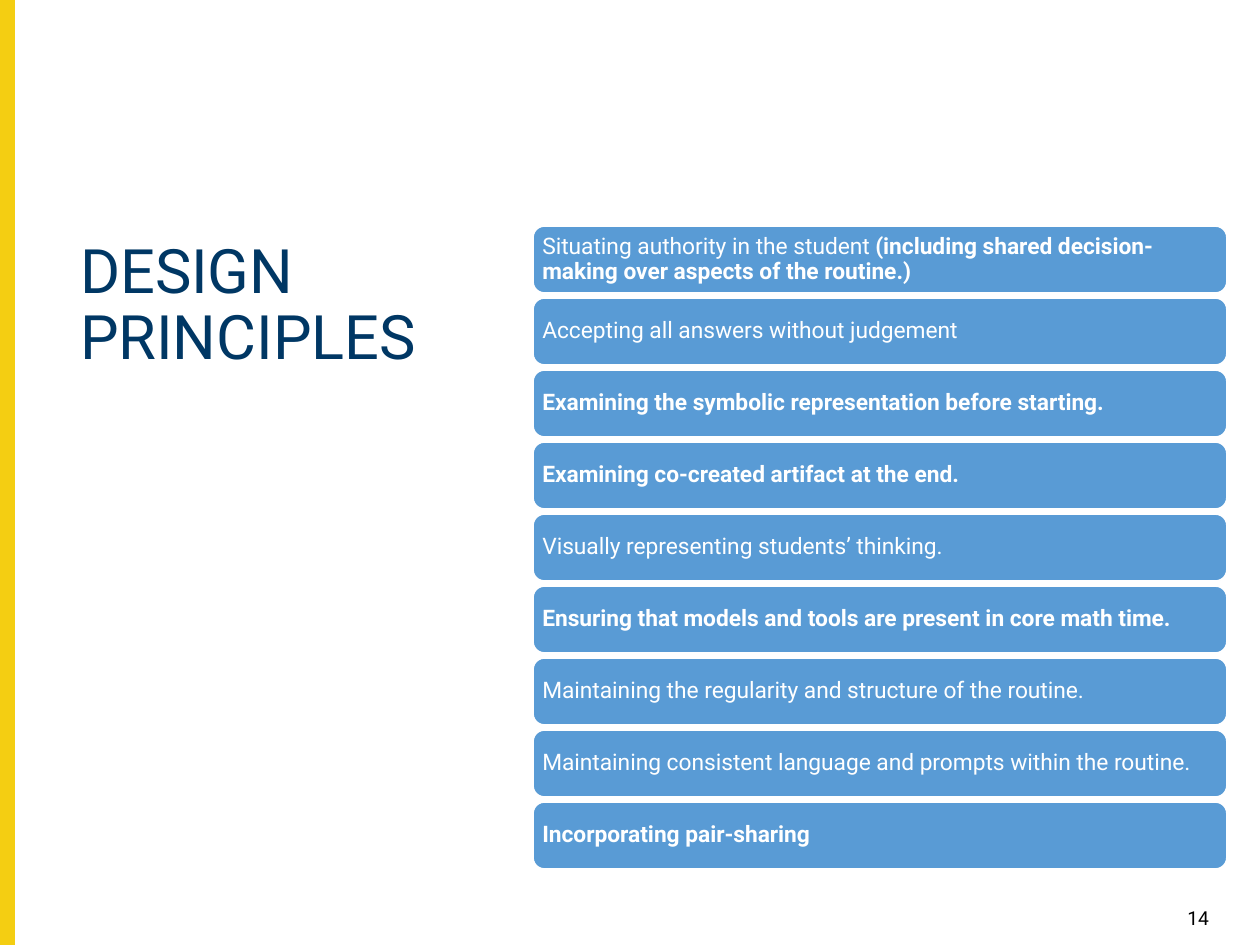
"""Build the Design Principles slide."""
from pptx import Presentation
from pptx.dml.color import RGBColor
from pptx.enum.shapes import MSO_SHAPE
from pptx.enum.text import MSO_ANCHOR, PP_ALIGN
from pptx.util import Pt

EMU_PER_PX = 914400 / 126
FONT = "Roboto"
YELLOW = RGBColor(0xF4, 0xCE, 0x12)
NAVY = RGBColor(0x00, 0x37, 0x64)
BLUE = RGBColor(0x59, 0x9B, 0xD5)
WHITE = RGBColor(0xFF, 0xFF, 0xFF)
BLACK = RGBColor(0x00, 0x00, 0x00)

PRINCIPLES = [
    ("Situating authority in the student ",
     "(including shared decision-making over aspects of the routine.)"),
    ("Accepting all answers without judgement", ""),
    ("", "Examining the symbolic representation before starting."),
    ("", "Examining co-created artifact at the end."),
    ("Visually representing students’ thinking.", ""),
    ("", "Ensuring that models and tools are present in core math time."),
    ("Maintaining the regularity and structure of the routine.", ""),
    ("Maintaining consistent language and prompts within the routine.", ""),
    ("", "Incorporating pair-sharing"),
]


def px(length):
    return round(length * EMU_PER_PX)


def write(frame, regular, bold="", *, size, color, anchor=MSO_ANCHOR.TOP,
          align=PP_ALIGN.LEFT, inset=(13, 13), spacing=1.0):
    frame.word_wrap = True
    frame.vertical_anchor = anchor
    frame.margin_left = frame.margin_right = px(inset[0])
    frame.margin_top = frame.margin_bottom = px(inset[1])
    paragraph = frame.paragraphs[0]
    paragraph.alignment = align
    paragraph.line_spacing = spacing
    for words, is_bold in ((regular, False), (bold, True)):
        if words:
            run = paragraph.add_run()
            run.text = words
            run.font.name = FONT
            run.font.size = Pt(size)
            run.font.bold = is_bold
            run.font.color.rgb = color


class SlideBuilder:
    def __init__(self, deck):
        self.slide = deck.slides.add_slide(deck.slide_layouts[6])

    def block(self, kind, left, top, width, height, fill, line):
        shape = self.slide.shapes.add_shape(
            kind, px(left), px(top), px(width), px(height))
        shape.shadow.inherit = False
        shape.fill.solid()
        shape.fill.fore_color.rgb = fill
        shape.line.color.rgb = line
        shape.line.width = Pt(1)
        return shape

    def label(self, left, top, width, height, words, **style):
        box = self.slide.shapes.add_textbox(
            px(left), px(top), px(width), px(height))
        write(box.text_frame, words, **style)

    def principle(self, top, regular, bold):
        bar = self.block(MSO_SHAPE.ROUNDED_RECTANGLE, 533, top, 694, 67,
                         BLUE, WHITE)
        bar.adjustments[0] = 0.17
        write(bar.text_frame, regular, bold, size=13, color=WHITE,
              anchor=MSO_ANCHOR.MIDDLE, inset=(6, 6), spacing=0.9)


def main():
    deck = Presentation()
    deck.slide_width, deck.slide_height = px(1260), px(945)
    page = SlideBuilder(deck)
    page.block(MSO_SHAPE.RECTANGLE, 0, 0, 14, 945, YELLOW, YELLOW)
    page.label(67, 192, 436, 194, "DESIGN PRINCIPLES", size=35, color=NAVY,
               anchor=MSO_ANCHOR.BOTTOM, spacing=0.9)
    page.label(1159, 900, 63, 26, "14", size=11, color=BLACK,
               align=PP_ALIGN.RIGHT, inset=(13, 6))
    for row, (regular, bold) in enumerate(PRINCIPLES):
        page.principle(226 + 72 * row, regular, bold)
    deck.save("out.pptx")


if __name__ == "__main__":
    main()
